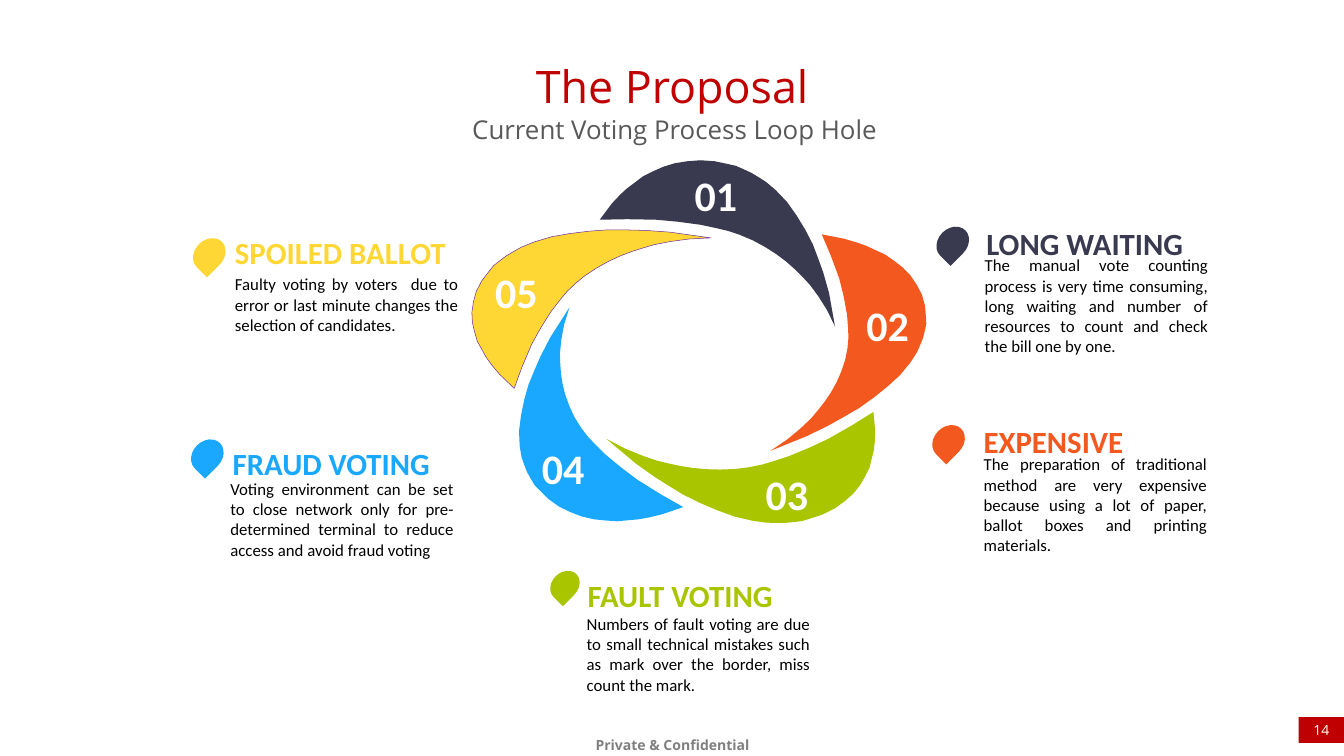
from dataclasses import dataclass
from math import cos, radians, sin

from pptx import Presentation
from pptx.dml.color import RGBColor
from pptx.enum.shapes import MSO_SHAPE
from pptx.enum.text import MSO_ANCHOR, PP_ALIGN
from pptx.util import Cm, Pt


@dataclass(frozen=True)
class Theme:
    red: str = "C00000"
    dark_grey: str = "595959"
    grey: str = "808080"
    white: str = "FFFFFF"
    black: str = "000000"
    navy: str = "393950"
    orange: str = "F3591F"
    green: str = "A9C500"
    blue: str = "1AA8FE"
    yellow: str = "FFD734"
    purple: str = "7030A0"
    display_font: str = "Open Sans"
    text_font: str = "Calibri"
    title_size: int = 64
    number_size: int = 60
    heading_size: int = 44
    subtitle_size: int = 37
    body_size: int = 24
    small_size: int = 20


THEME = Theme()

# The ring: one petal turned in steps of 72 degrees, then widened
RING_CENTRE = (13.86, 6.99)
RING_STRETCH = 1.22
CM_PER_INCH = 2.54
# Outline of the first petal, in inches on the slide
PETAL = [
    (11.9, 4.36), (12.14, 4.04), (12.31, 3.86), (12.44, 3.74), (12.6, 3.62),
    (12.76, 3.5), (12.96, 3.4), (13.16, 3.31), (13.39, 3.24), (13.64, 3.2),
    (13.9, 3.18), (14.18, 3.2), (14.42, 3.25), (14.6, 3.29), (14.76, 3.36),
    (14.91, 3.43), (15.06, 3.52), (15.2, 3.61), (15.39, 3.77), (15.62, 4.01),
    (15.81, 4.28), (15.98, 4.56), (16.13, 4.85), (16.24, 5.14), (16.34, 5.42),
    (16.45, 5.81), (16.57, 6.48), (16.41, 6.15), (16.24, 5.88), (16.07, 5.65),
    (15.93, 5.5), (15.77, 5.34), (15.6, 5.19), (15.4, 5.04), (15.18, 4.9),
    (14.94, 4.77), (14.68, 4.66), (14.44, 4.58), (14.23, 4.53), (13.9, 4.46),
    (13.45, 4.4), (13.02, 4.36), (12.44, 4.35),
]

# Petal colour, number, number position (cm)
STEPS = [
    (THEME.navy, "01", (34.75, 8.41)),
    (THEME.orange, "02", (43.41, 14.96)),
    (THEME.green, "03", (38.33, 23.47)),
    (THEME.blue, "04", (27.05, 22.17)),
    (THEME.yellow, "05", (24.69, 13.31)),
]

LARGE_DROP = (1.8, 1.47)
SMALL_DROP = (1.63, 1.32)

# Colour, drop position and size, heading position and text,
# body position, line count and text (cm)
CARDS = [
    (THEME.yellow, (9.65, 12.09), LARGE_DROP, (11.84, 11.63), "SPOILED BALLOT",
     (11.84, 13.67), 3,
     "Faulty voting by voters  due to error or last minute changes the "
     "selection of candidates."),
    (THEME.blue, (9.55, 22.23), LARGE_DROP, (11.73, 22.28), "FRAUD VOTING",
     (11.61, 23.98), 4,
     "Voting environment can be set to close network only for pre-determined "
     "terminal to reduce access and avoid fraud voting"),
    (THEME.navy, (47.12, 11.51), LARGE_DROP, (49.71, 11.18), "LONG WAITING",
     (49.63, 12.7), 5,
     "The manual vote counting process is very time consuming, long waiting "
     "and number of resources to count and check the bill one by one."),
    (THEME.orange, (46.91, 21.51), LARGE_DROP, (49.58, 21.18), "EXPENSIVE",
     (49.58, 22.73), 5,
     "The preparation of traditional method are very expensive because using "
     "a lot of paper, ballot boxes and printing materials."),
    (THEME.green, (27.66, 28.85), SMALL_DROP, (29.62, 28.93), "FAULT VOTING",
     (29.57, 30.78), 4,
     "Numbers of fault voting are due to small technical mistakes such as "
     "mark over the border, miss count the mark."),
]


def write(shape, text, size, color, font=THEME.text_font, bold=False,
          align=PP_ALIGN.LEFT, anchor=MSO_ANCHOR.MIDDLE, insets=(0, 0.13)):
    frame = shape.text_frame
    frame.text = text
    frame.word_wrap = True
    frame.vertical_anchor = anchor
    frame.margin_left = frame.margin_right = Cm(insets[0])
    frame.margin_top = frame.margin_bottom = Cm(insets[1])
    paragraph = frame.paragraphs[0]
    paragraph.alignment = align
    run_font = paragraph.runs[0].font
    run_font.name = font
    run_font.size = Pt(size)
    run_font.bold = bold
    run_font.color.rgb = RGBColor.from_string(color)


def add_text(slide, box, text, size, color, **style):
    shape = slide.shapes.add_textbox(*map(Cm, box))
    write(shape, text, size, color, **style)
    return shape


def paint(shape, color, line=None):
    shape.shadow.inherit = False
    shape.fill.solid()
    shape.fill.fore_color.rgb = RGBColor.from_string(color)
    if line:
        shape.line.color.rgb = RGBColor.from_string(line)
        shape.line.width = Pt(0.75)
    else:
        shape.line.fill.background()


def add_preset(slide, kind, box, color):
    shape = slide.shapes.add_shape(kind, *map(Cm, box))
    paint(shape, color)
    return shape


def add_petal(slide, index, color, line=None):
    angle = radians(72 * index)
    centre_x, centre_y = RING_CENTRE
    points = []
    for x, y in PETAL:
        across, down = (x - centre_x) / RING_STRETCH, y - centre_y
        turned_x = across * cos(angle) - down * sin(angle)
        turned_y = across * sin(angle) + down * cos(angle)
        points.append((Cm((centre_x + turned_x * RING_STRETCH) * CM_PER_INCH),
                       Cm((centre_y + turned_y) * CM_PER_INCH)))
    builder = slide.shapes.build_freeform(*points[0])
    builder.add_line_segments(points[1:], close=True)
    paint(builder.convert_to_shape(), color, line)


def add_card(slide, color, drop_at, drop_size, heading_at, heading,
             body_at, line_count, body):
    drop = add_preset(slide, MSO_SHAPE.TEAR, (*drop_at, *drop_size), color)
    drop.rotation = 135
    add_text(slide, (*heading_at, 11.25, 2.13), heading,
             THEME.heading_size, color, bold=True)
    add_text(slide, (*body_at, 11.25, 0.25 + 1.03 * line_count), body,
             THEME.body_size, THEME.black, align=PP_ALIGN.JUSTIFY)


def add_titles(slide):
    style = dict(font=THEME.display_font, align=PP_ALIGN.CENTER,
                 anchor=MSO_ANCHOR.TOP, insets=(0.69, 0.33))
    title = slide.shapes.title
    title.left, title.top, title.width, title.height = map(
        Cm, (3.89, 2.64, 59.97, 3.43))
    write(title, "The Proposal", THEME.title_size, THEME.red, **style)
    add_text(slide, (4.01, 5.41, 59.97, 2.29), "Current Voting Process Loop Hole",
             THEME.subtitle_size, THEME.dark_grey, **style)


def add_footer(slide):
    style = dict(font=THEME.display_font, align=PP_ALIGN.CENTER)
    footer = add_text(slide, (29.29, 36.63, 9.22, 1.98), "Private & Confidential",
                      THEME.small_size, THEME.grey, bold=True,
                      anchor=MSO_ANCHOR.TOP, insets=(0.61, 0.3), **style)
    footer.text_frame.paragraphs[0].line_spacing = 1.2
    badge = add_preset(slide, MSO_SHAPE.RECTANGLE, (65.46, 36.14, 2.29, 1.3), THEME.red)
    write(badge, "14", THEME.small_size, THEME.white, insets=(0, 0), **style)


def main():
    presentation = Presentation()
    presentation.slide_width = Cm(67.74)
    presentation.slide_height = Cm(38.1)
    slide = presentation.slides.add_slide(presentation.slide_layouts[5])

    add_titles(slide)
    add_footer(slide)

    # Loop hole descriptions
    for card in CARDS:
        add_card(slide, *card)

    # Numbered ring
    for index, (color, _, _) in enumerate(STEPS):
        add_petal(slide, index, color,
                  THEME.purple if color == THEME.yellow else None)
    for _, number, position in STEPS:
        add_text(slide, (*position, 2.67, 2.82), number, THEME.number_size,
                 THEME.white, bold=True, align=PP_ALIGN.CENTER)

    presentation.save("out.pptx")


if __name__ == "__main__":
    main()
